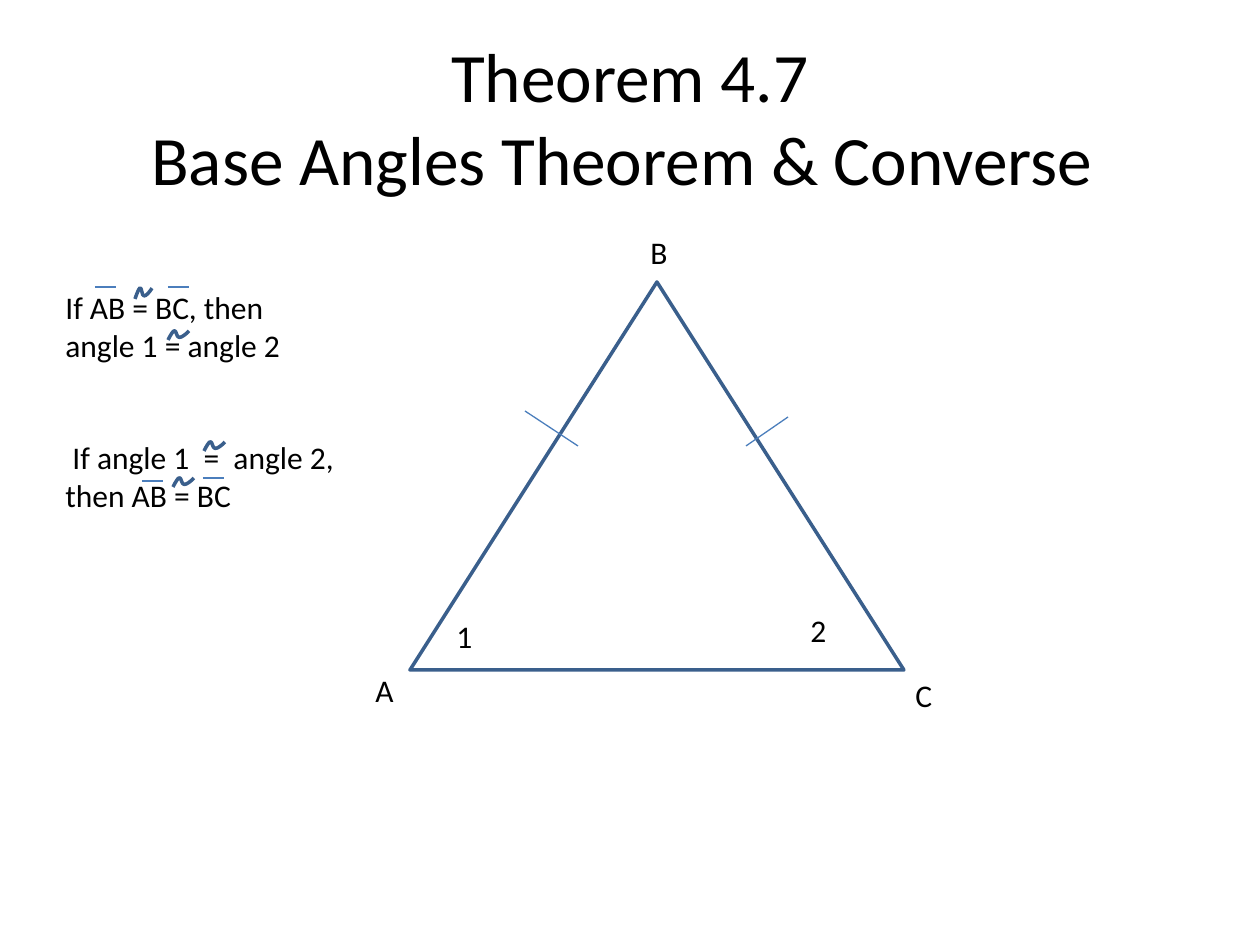
from dataclasses import dataclass

from lxml import etree
from pptx import Presentation
from pptx.dml.color import RGBColor
from pptx.enum.shapes import MSO_CONNECTOR, MSO_SHAPE
from pptx.enum.text import MSO_ANCHOR, PP_ALIGN
from pptx.oxml.ns import qn
from pptx.util import Pt

STRAIGHT = MSO_CONNECTOR.STRAIGHT
TRIANGLE = MSO_SHAPE.ISOSCELES_TRIANGLE
TOP, MIDDLE = MSO_ANCHOR.TOP, MSO_ANCHOR.MIDDLE
LEFT, CENTER = PP_ALIGN.LEFT, PP_ALIGN.CENTER

# Start point, then three Bezier points per curve, in percent of the box
WAVE = [(0, 100), (12, 50), (24, 10), (30, 8), (40, 0), (40, 75), (53, 75),
        (65, 75), (82, 50), (100, 10)]


@dataclass(frozen=True)
class Theme:
    font: str = "Calibri"
    ink: RGBColor = RGBColor(0, 0, 0)
    edge: RGBColor = RGBColor(0x3A, 0x5F, 0x8C)
    mark: RGBColor = RGBColor(0x4B, 0x7E, 0xBC)
    title: float = 39.6
    body: float = 18
    thick: float = 2
    thin: float = 0.75


THEME = Theme()


def px(n):
    return round(n * 914400 / 126)


def add_text(slide, box, lines, size=THEME.body, align=LEFT, anchor=TOP):
    frame = slide.shapes.add_textbox(*map(px, box)).text_frame
    frame.word_wrap = True
    frame.vertical_anchor = anchor
    para = frame.paragraphs[0]
    para.alignment = align
    for i, line in enumerate(lines):
        if i:
            para.add_line_break()
        run = para.add_run()
        run.text = line
        run.font.name = THEME.font
        run.font.size = Pt(size)
        run.font.color.rgb = THEME.ink


def outline(shape):
    shape.shadow.inherit = False
    shape.fill.background()
    shape.line.color.rgb = THEME.edge
    shape.line.width = Pt(THEME.thick)


def add_line(slide, *ends):
    line = slide.shapes.add_connector(STRAIGHT, *map(px, ends))
    line.line.color.rgb = THEME.mark
    line.line.width = Pt(THEME.thin)
    etree.SubElement(line._element.spPr, qn("a:effectLst"))


def add_wave(slide, x, y, w, h):
    """Draw the tilde that turns an equals sign into a congruence sign."""
    dots = [(px(x + w * u / 100), px(y + h * v / 100)) for u, v in WAVE]
    pen = slide.shapes.build_freeform(*dots[0])
    pen.add_line_segments(dots[1:], close=False)
    shape = pen.convert_to_shape()
    outline(shape)
    steps = list(shape._element.iter(qn("a:lnTo")))
    for i in range(0, len(steps), 3):
        curve = etree.Element(qn("a:cubicBezTo"))
        steps[i].addprevious(curve)
        for step in steps[i:i + 3]:
            curve.append(step[0])
            step.getparent().remove(step)


def add_claim(slide, box, text, bars, waves):
    """Place a statement with its segment bars and congruence waves."""
    left, top = box[:2]
    add_text(slide, box, [text])
    for x, y in bars:
        add_line(slide, left + x, top + y, left + x + 21, top + y)
    for x, y, w, h in waves:
        add_wave(slide, left + x, top + y, w, h)


def add_figure(slide, box):
    """Draw the isosceles triangle with its ticks and labels."""
    left, top = box[:2]
    outline(slide.shapes.add_shape(TRIANGLE, *map(px, box)))
    for x1, y1, x2, y2 in [(378, 135, 336, 164), (115, 129, 168, 164)]:
        add_line(slide, left + x1, top + y1, left + x2, top + y2)
    for name, x, y in [("1", 34, 329), ("2", 388, 323), ("A", -47, 383),
                       ("C", 493, 388), ("B", 228, -55)]:
        add_text(slide, (left + x, top + y, 48, 50), [name])


def main():
    deck = Presentation()
    deck.slide_width, deck.slide_height = px(1260), px(945)
    slide = deck.slides.add_slide(deck.slide_layouts[6])
    add_text(slide, (63, 38, 1134, 157),
             ["Theorem 4.7", "Base Angles Theorem & Converse "],
             THEME.title, CENTER, MIDDLE)
    add_figure(slide, (410, 282, 494, 388))
    add_claim(slide, (53, 282, 294, 89), "If AB = BC, then angle 1 = angle 2",
              [(42, 5), (115, 5)], [(82, 5, 17, 12), (115, 48, 21, 10)])
    add_claim(slide, (53, 432, 334, 89),
              " If angle 1  =  angle 2, then AB = BC",
              [(89, 49), (150, 46)], [(151, 9, 21, 10), (120, 45, 21, 10)])
    deck.save("out.pptx")


if __name__ == "__main__":
    main()
